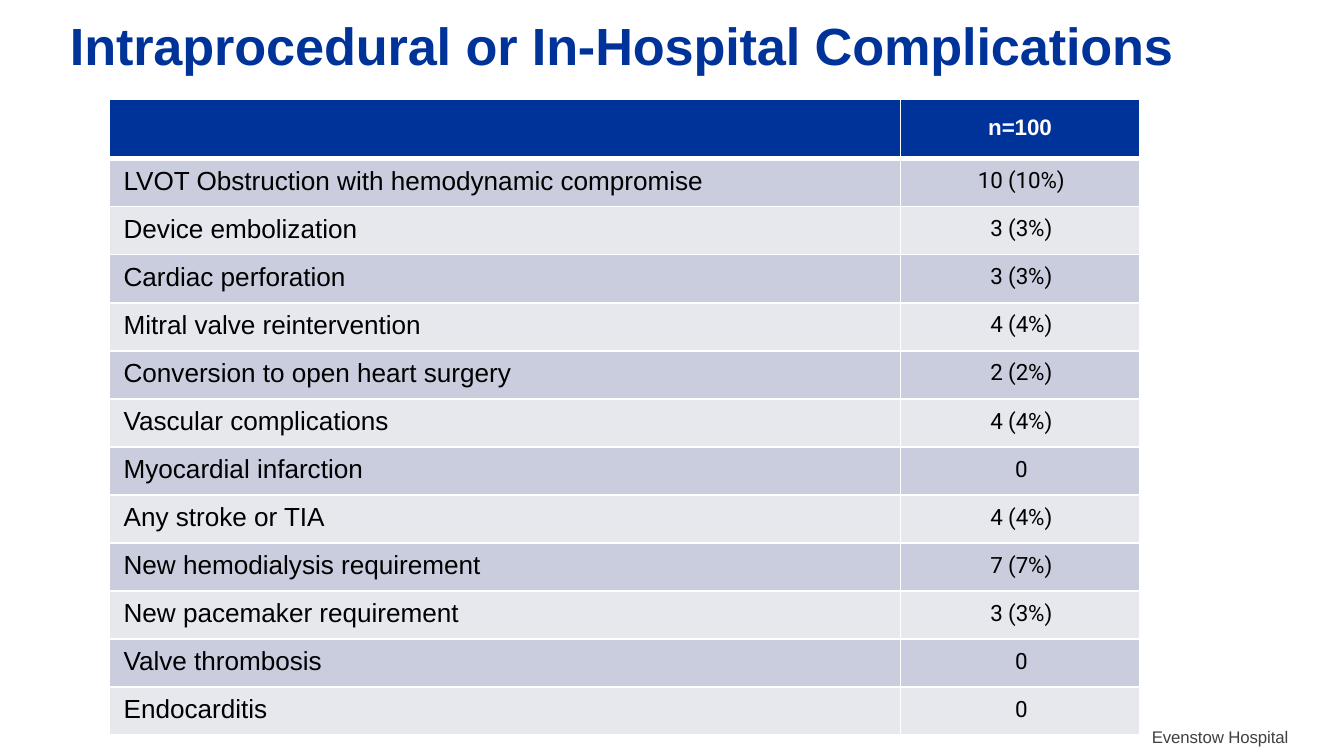
import pptx
import pptx.dml.color
import pptx.enum.text
import pptx.oxml
import pptx.oxml.ns
import pptx.util
from pptx.util import Inches

BLUE = "003399"
WHITE = "FFFFFF"
BLACK = "000000"
BANDS = ["CACDDE", "E7E8EE"]
COLUMN_WIDTHS = [5.89, 1.78]
HEADER_HEIGHT = 0.44
BODY_HEIGHT = 4.29
COMPLICATIONS = [
    ("LVOT Obstruction with hemodynamic compromise", "10 (10%)"),
    ("Device embolization", "3 (3%)"),
    ("Cardiac perforation", "3 (3%)"),
    ("Mitral valve reintervention", "4 (4%)"),
    ("Conversion to open heart surgery", "2 (2%)"),
    ("Vascular complications", "4 (4%)"),
    ("Myocardial infarction", "0"),
    ("Any stroke or TIA", "4 (4%)"),
    ("New hemodialysis requirement", "7 (7%)"),
    ("New pacemaker requirement", "3 (3%)"),
    ("Valve thrombosis", "0"),
    ("Endocarditis", "0"),
]


def color(value):
    return pptx.dml.color.RGBColor.from_string(value)


def write(frame, text, size, hue, font="Arial", bold=False, spacing=-5, centered=False):
    frame.text = text
    para = frame.paragraphs[0]
    if centered:
        para.alignment = pptx.enum.text.PP_ALIGN.CENTER
    for span in para.runs:
        span.font.size = pptx.util.Pt(size)
        span.font.name = font
        span.font.bold = bold
        span.font.color.rgb = color(hue)
        span.font._element.set("spc", str(spacing))


def add_text(page, left, top, width, height, text, size, hue, bold=False):
    box = page.shapes.add_textbox(Inches(left), Inches(top), Inches(width), Inches(height))
    frame = box.text_frame
    frame.word_wrap = True
    frame.margin_left = frame.margin_right = frame.margin_bottom = 0
    frame.margin_top = Inches(0.01)
    write(frame, text, size, hue, bold=bold)


def set_borders(cell, top=1, bottom=1):
    properties = cell._tc.get_or_add_tcPr()
    widths = {"lnL": 1, "lnR": 1, "lnT": top, "lnB": bottom}
    for index, (side, width) in enumerate(widths.items()):
        line = pptx.oxml.parse_xml(
            f'<a:{side} {pptx.oxml.ns.nsdecls("a")} w="{pptx.util.Pt(width)}">'
            f'<a:solidFill><a:srgbClr val="{WHITE}"/></a:solidFill></a:{side}>'
        )
        properties.insert(index, line)


def style_cell(cell, fill, left=0, top=0.0, border_top=1, border_bottom=1):
    cell.fill.solid()
    cell.fill.fore_color.rgb = color(fill)
    cell.margin_left = Inches(left)
    cell.margin_top = Inches(top)
    cell.margin_right = cell.margin_bottom = 0
    set_borders(cell, border_top, border_bottom)


def add_complications_table(page):
    table = page.shapes.add_table(
        len(COMPLICATIONS) + 1, len(COLUMN_WIDTHS),
        Inches(0.81), Inches(0.74),
        Inches(sum(COLUMN_WIDTHS)), Inches(HEADER_HEIGHT + BODY_HEIGHT),
    ).table
    for column, width in zip(table.columns, COLUMN_WIDTHS):
        column.width = Inches(width)
    for row in table.rows:
        row.height = Inches(BODY_HEIGHT / len(COMPLICATIONS))
    table.rows[0].height = Inches(HEADER_HEIGHT)

    for cell in table.rows[0].cells:
        style_cell(cell, BLUE, top=0.12, border_bottom=3)
    write(table.cell(0, 1).text_frame, "n=100", 12, WHITE, bold=True, centered=True)

    for index, (complication, count) in enumerate(COMPLICATIONS):
        label, value = table.rows[index + 1].cells
        fill = BANDS[index % 2]
        border_top = 3 if index == 0 else 1
        style_cell(label, fill, left=0.11, top=0.06, border_top=border_top)
        style_cell(value, fill, left=0.02, top=0.07, border_top=border_top)
        write(label.text_frame, complication, 14, BLACK, spacing=-3)
        write(value.text_frame, count, 12, BLACK, font="Roboto", centered=True)


def main():
    deck = pptx.Presentation()
    deck.slide_width = Inches(10)
    deck.slide_height = Inches(10 * 9 / 16)
    page = deck.slides.add_slide(deck.slide_layouts[6])
    add_text(page, 0.52, 0.09, 8.28, 0.49,
             "Intraprocedural or In-Hospital Complications", 28, BLUE, bold=True)
    add_text(page, 8.57, 5.4, 1.04, 0.17, "Evenstow Hospital", 9, "404040")
    add_complications_table(page)
    deck.save("out.pptx")


if __name__ == "__main__":
    main()
